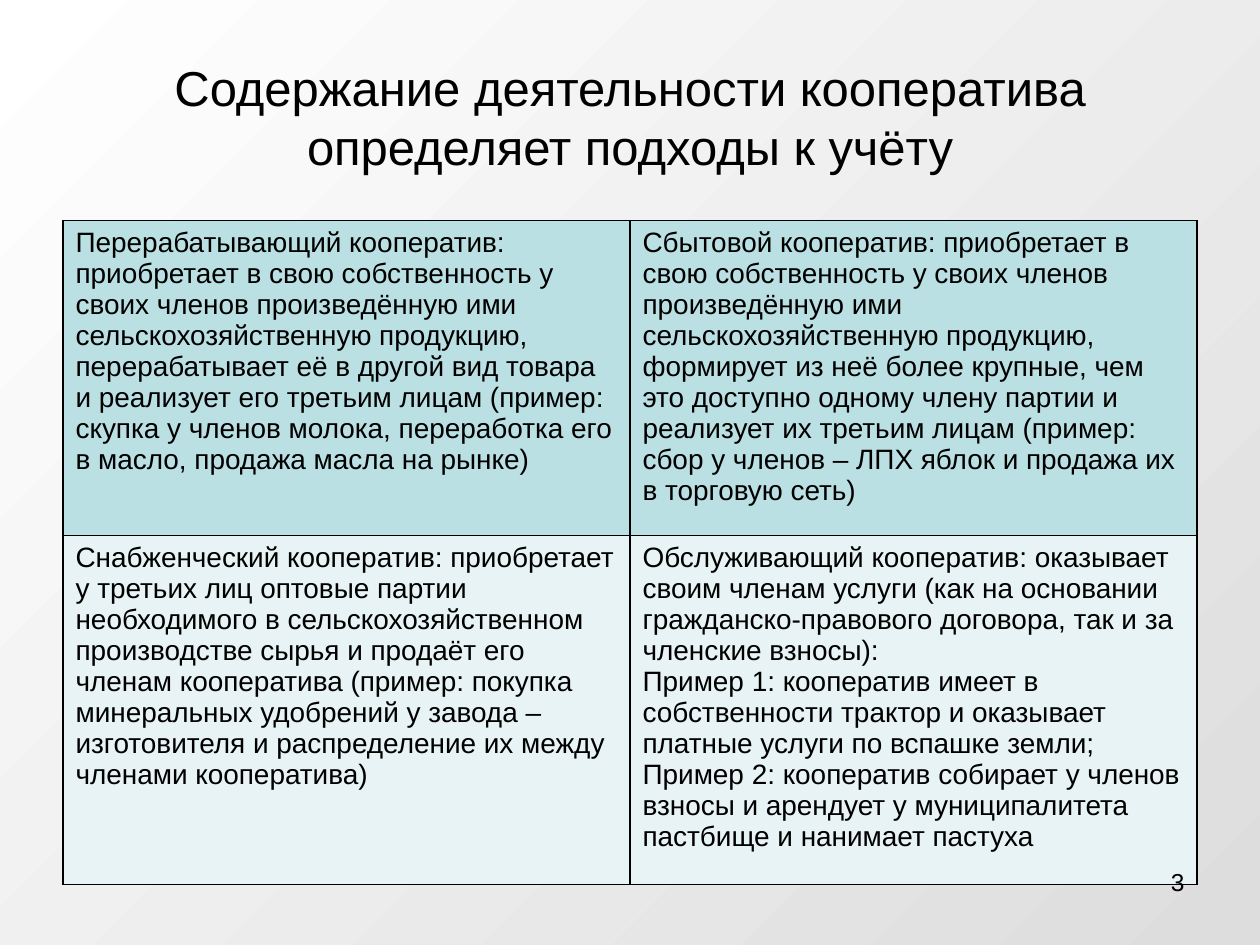
from dataclasses import dataclass

from pptx import Presentation
from pptx.dml.color import RGBColor
from pptx.enum.text import MSO_ANCHOR, MSO_AUTO_SIZE, PP_ALIGN as Align
from pptx.oxml import parse_xml
from pptx.oxml.ns import nsdecls
from pptx.util import Inches, Pt


@dataclass(frozen=True)
class Theme:
    font: str = "Arial"
    text: str = "000000"
    border: str = "000000"
    background: tuple = ("FFFFFF", "DDDDDD")
    rows: tuple = ("BBE0E3", "E7F3F4")
    title_size: int = 28
    body_size: int = 16
    number_size: int = 14
    border_width: int = 1


class SlideBuilder:
    def __init__(self, slide, theme):
        self.slide = slide
        self.theme = theme

    def format_text(self, text_frame, size, alignment):
        for paragraph in text_frame.paragraphs:
            paragraph.alignment = alignment
            for run in paragraph.runs:
                run.font.name = self.theme.font
                run.font.size = Pt(size)
                run.font.color.rgb = RGBColor.from_string(self.theme.text)

    def place(self, shape, left, top, width, height):
        shape.left, shape.top = Inches(left), Inches(top)
        shape.width, shape.height = Inches(width), Inches(height)

    def background(self):
        fill = self.slide.background.fill
        fill.gradient()
        fill.gradient_angle = 315
        for position, (stop, color) in enumerate(zip(fill.gradient_stops, self.theme.background)):
            stop.color.rgb = RGBColor.from_string(color)
            stop.position = position

    def title(self, text, *box):
        shape = self.slide.shapes.title
        self.place(shape, *box)
        text_frame = shape.text_frame
        text_frame.text = text
        text_frame.word_wrap = True
        text_frame.auto_size = MSO_AUTO_SIZE.NONE
        text_frame.vertical_anchor = MSO_ANCHOR.MIDDLE
        self.format_text(text_frame, self.theme.title_size, Align.CENTER)

    def border(self, cell):
        properties = cell._tc.get_or_add_tcPr()
        for index, side in enumerate(("lnL", "lnR", "lnT", "lnB")):
            properties.insert(index, parse_xml(
                f'<a:{side} {nsdecls("a")} w="{Pt(self.theme.border_width)}">'
                f'<a:solidFill><a:srgbClr val="{self.theme.border}"/></a:solidFill></a:{side}>'
            ))

    def table(self, rows, left, top, width, heights):
        columns = len(rows[0])
        table = self.slide.shapes.add_table(
            len(rows), columns, Inches(left), Inches(top), Inches(width), Inches(sum(heights))
        ).table
        for column in table.columns:
            column.width = Inches(width / columns)
        for row, texts, height, color in zip(table.rows, rows, heights, self.theme.rows):
            row.height = Inches(height)
            for cell, text in zip(row.cells, texts):
                cell.text_frame.text = text
                cell.fill.solid()
                cell.fill.fore_color.rgb = RGBColor.from_string(color)
                self.border(cell)
                self.format_text(cell.text_frame, self.theme.body_size, Align.LEFT)

    def page_number(self, number, *box):
        text_frame = self.slide.shapes.add_textbox(*map(Inches, box)).text_frame
        text_frame.word_wrap = True
        text_frame.text = str(number)
        self.format_text(text_frame, self.theme.number_size, Align.RIGHT)


COOPERATIVES = [
    [
        "Перерабатывающий кооператив: приобретает в свою собственность у своих членов "
        "произведённую ими сельскохозяйственную продукцию, перерабатывает её в другой вид товара "
        "и реализует его третьим лицам (пример: скупка у членов молока, переработка его в масло, "
        "продажа масла на рынке)",
        "Сбытовой кооператив: приобретает в свою собственность у своих членов произведённую ими "
        "сельскохозяйственную продукцию, формирует из неё более крупные, чем это доступно одному "
        "члену партии и реализует их третьим лицам (пример: сбор у членов – ЛПХ яблок и продажа "
        "их в торговую сеть)",
    ],
    [
        "Снабженческий кооператив: приобретает у третьих лиц оптовые партии необходимого в "
        "сельскохозяйственном производстве сырья и продаёт его членам кооператива (пример: "
        "покупка минеральных удобрений у завода – изготовителя и распределение их между членами "
        "кооператива)",
        "Обслуживающий кооператив: оказывает своим членам услуги (как на основании "
        "гражданско-правового договора, так и за членские взносы):\n"
        "Пример 1: кооператив имеет в собственности трактор и оказывает платные услуги по вспашке "
        "земли;\n"
        "Пример 2: кооператив собирает у членов взносы и арендует у муниципалитета пастбище и "
        "нанимает пастуха",
    ],
]


def main():
    presentation = Presentation()
    presentation.slide_width, presentation.slide_height = Inches(10), Inches(7.5)
    slide = presentation.slides.add_slide(presentation.slide_layouts[5])
    builder = SlideBuilder(slide, Theme())
    builder.background()
    builder.title("Содержание деятельности кооператива определяет подходы к учёту", 0.5, 0.3, 9, 1.25)
    builder.table(COOPERATIVES, 0.5, 1.75, 9, (2.5, 2.77))
    builder.page_number(3, 7.17, 6.83, 2.33, 0.52)
    presentation.save("out.pptx")


if __name__ == "__main__":
    main()
